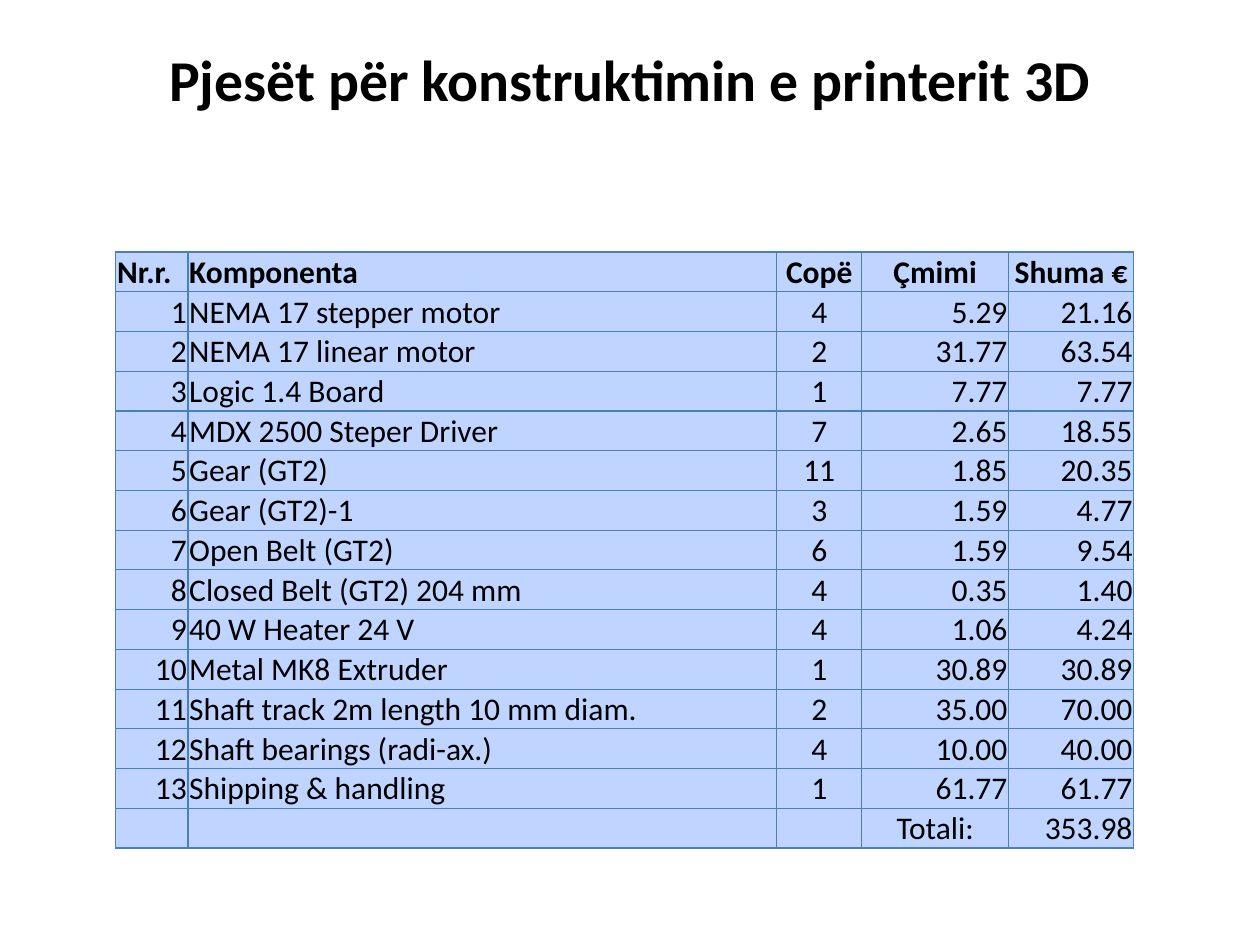
from dataclasses import dataclass
from typing import NamedTuple

from lxml.etree import SubElement
from pptx import Presentation
from pptx.dml.color import RGBColor
from pptx.enum.text import MSO_ANCHOR, PP_ALIGN
from pptx.oxml.ns import qn
from pptx.util import Pt


@dataclass(frozen=True)
class Theme:
    font: str = "Calibri"
    text: str = "000000"
    cell: str = "BFD4FF"
    border: str = "4B7EBC"
    title_size: float = 33
    table_size: float = 18
    border_width: float = 0.75
    inset: float = 0.72


class Column(NamedTuple):
    heading: str
    width: float
    heading_align: PP_ALIGN
    align: PP_ALIGN


class Part(NamedTuple):
    name: str
    count: int
    price: float


THEME = Theme()
ROW_HEIGHT = 18.72
COLUMNS = [
    Column("Nr.r.", 41.2, PP_ALIGN.LEFT, PP_ALIGN.RIGHT),
    Column("Komponenta", 336.5, PP_ALIGN.LEFT, PP_ALIGN.LEFT),
    Column("Copë", 48.5, PP_ALIGN.CENTER, PP_ALIGN.CENTER),
    Column("Çmimi", 84, PP_ALIGN.CENTER, PP_ALIGN.RIGHT),
    Column("Shuma €", 71.5, PP_ALIGN.CENTER, PP_ALIGN.RIGHT),
]
PARTS = [
    Part("NEMA 17 stepper motor", 4, 5.29),
    Part("NEMA 17 linear motor", 2, 31.77),
    Part("Logic 1.4 Board", 1, 7.77),
    Part("MDX 2500 Steper Driver", 7, 2.65),
    Part("Gear (GT2)", 11, 1.85),
    Part("Gear (GT2)-1", 3, 1.59),
    Part("Open Belt (GT2)", 6, 1.59),
    Part("Closed Belt (GT2) 204 mm", 4, 0.35),
    Part("40 W Heater 24 V", 4, 1.06),
    Part("Metal MK8 Extruder", 1, 30.89),
    Part("Shaft track 2m length 10 mm diam.", 2, 35),
    Part("Shaft bearings (radi-ax.)", 4, 10),
    Part("Shipping & handling", 1, 61.77),
]


def add_run(paragraph, text: str, size: float, bold: bool) -> None:
    run = paragraph.add_run()
    run.text = text
    run.font.name = THEME.font
    run.font.size = Pt(size)
    run.font.bold = bold
    run.font.color.rgb = RGBColor.from_string(THEME.text)


def add_title(slide, text: str) -> None:
    title = slide.shapes.title
    title.left, title.top, title.width, title.height = Pt(36), Pt(0), Pt(648), Pt(90)
    title.text_frame.vertical_anchor = MSO_ANCHOR.MIDDLE
    paragraph = title.text_frame.paragraphs[0]
    paragraph.alignment = PP_ALIGN.CENTER
    add_run(paragraph, text, THEME.title_size, True)


def add_borders(cell) -> None:
    properties = cell._tc.get_or_add_tcPr()
    for side in ("a:lnL", "a:lnR", "a:lnT", "a:lnB"):
        line = SubElement(properties, qn(side), w=str(Pt(THEME.border_width)))
        fill = SubElement(line, qn("a:solidFill"))
        SubElement(fill, qn("a:srgbClr"), val=THEME.border)


def fill_cell(cell, text: str, align: PP_ALIGN, bold: bool) -> None:
    add_borders(cell)
    cell.fill.solid()
    cell.fill.fore_color.rgb = RGBColor.from_string(THEME.cell)
    cell.margin_left = cell.margin_right = cell.margin_top = Pt(THEME.inset)
    cell.margin_bottom = Pt(0)
    cell.vertical_anchor = MSO_ANCHOR.BOTTOM
    paragraph = cell.text_frame.paragraphs[0]
    paragraph.alignment = align
    if text:
        add_run(paragraph, text, THEME.table_size, bold)


def table_rows() -> list[list[str]]:
    rows = [[column.heading for column in COLUMNS]]
    for number, part in enumerate(PARTS, start=1):
        amount = part.count * part.price
        rows.append([str(number), part.name, str(part.count), f"{part.price:.2f}", f"{amount:.2f}"])
    total = sum(part.count * part.price for part in PARTS)
    rows.append(["", "", "", "Totali:", f"{total:.2f}"])
    return rows


def add_parts_table(slide) -> None:
    rows = table_rows()
    width = sum(column.width for column in COLUMNS)
    frame = slide.shapes.add_table(
        len(rows), len(COLUMNS), Pt(66.24), Pt(144), Pt(width), Pt(ROW_HEIGHT * len(rows))
    )
    table = frame.table
    table.first_row = table.horz_banding = False
    for table_column, column in zip(table.columns, COLUMNS):
        table_column.width = Pt(column.width)
    for row_index, texts in enumerate(rows):
        table.rows[row_index].height = Pt(ROW_HEIGHT)
        is_heading = row_index == 0
        for column_index, (text, column) in enumerate(zip(texts, COLUMNS)):
            align = column.heading_align if is_heading or text == "Totali:" else column.align
            fill_cell(table.cell(row_index, column_index), text, align, is_heading)
    frame.height = Pt(335.5)


def main() -> None:
    """Build the slide with the parts list of the 3D printer."""
    presentation = Presentation()
    presentation.slide_width, presentation.slide_height = Pt(720), Pt(540)
    slide = presentation.slides.add_slide(presentation.slide_layouts[5])
    add_title(slide, "Pjesët për konstruktimin e printerit 3D")
    add_parts_table(slide)
    presentation.save("out.pptx")


if __name__ == "__main__":
    main()
